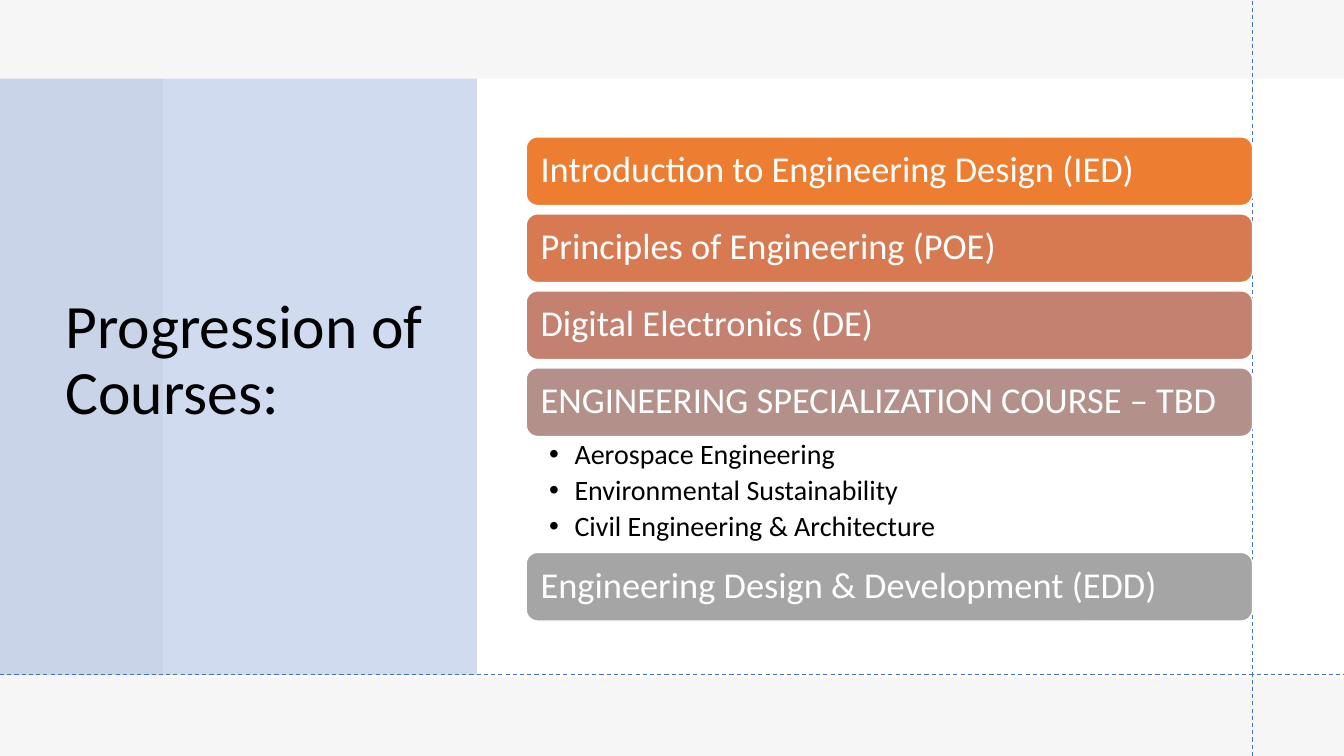
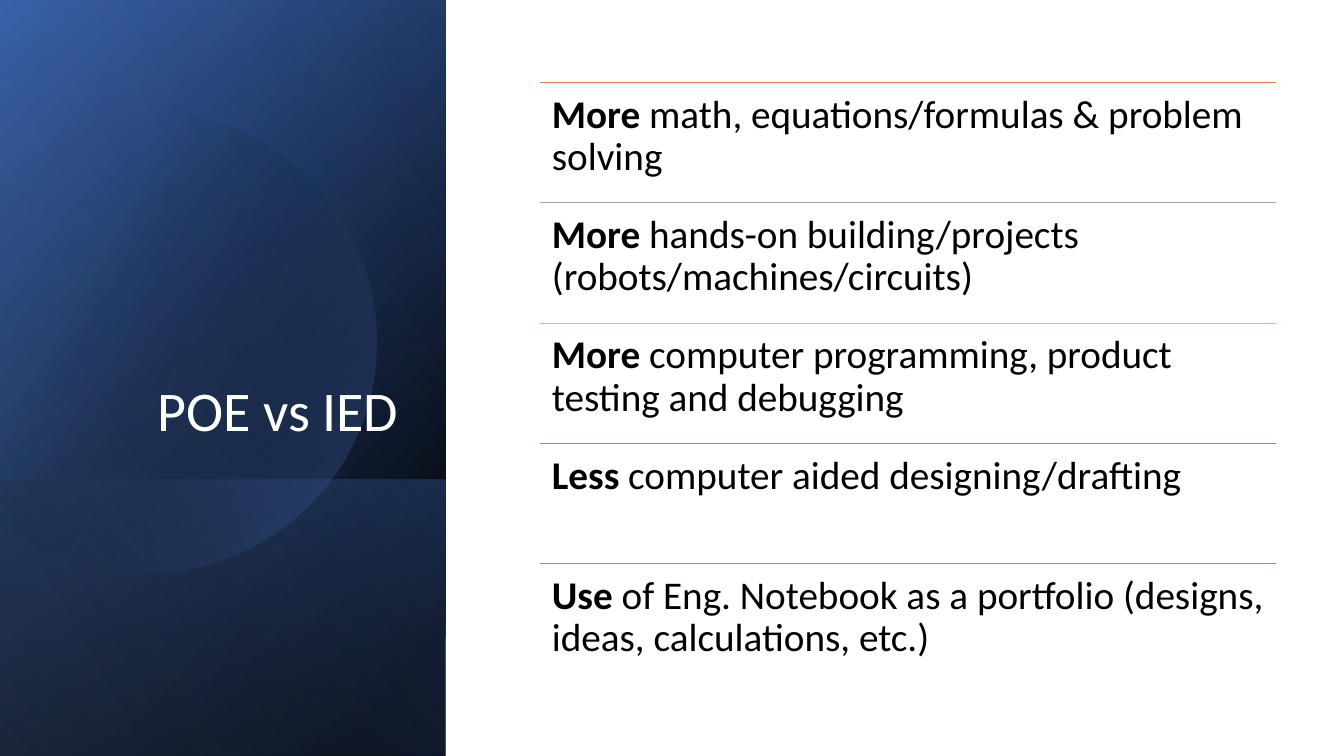
from math import acos, cos, radians, sin

from lxml.etree import SubElement
from pptx import Presentation
from pptx.dml.color import RGBColor
from pptx.enum.dml import MSO_LINE
from pptx.enum.shapes import MSO_CONNECTOR, MSO_SHAPE
from pptx.enum.text import MSO_ANCHOR, MSO_AUTO_SIZE, PP_ALIGN
from pptx.oxml import parse_xml
from pptx.oxml.ns import nsdecls, qn
from pptx.util import Cm, Pt

BLACK = RGBColor(0x00, 0x00, 0x00)
WHITE = RGBColor(0xFF, 0xFF, 0xFF)
PALE_GREY = RGBColor(0xE7, 0xE6, 0xE6)
BLUE = RGBColor(0x44, 0x72, 0xC4)
DARK_BLUE = RGBColor(0x2F, 0x55, 0x97)
LIGHT_BLUE = RGBColor(0x8F, 0xAA, 0xDC)
ORANGE = RGBColor(0xED, 0x7D, 0x31)
TERRACOTTA = RGBColor(0xD8, 0x7A, 0x51)
CLAY = RGBColor(0xC4, 0x81, 0x70)
MAUVE = RGBColor(0xB4, 0x90, 0x8B)
GREY = RGBColor(0xA5, 0xA5, 0xA5)
GOLD = RGBColor(0xFF, 0xC0, 0x00)
SKY = RGBColor(0x5B, 0x9B, 0xD5)
GREEN = RGBColor(0x70, 0xAD, 0x47)

FONT = "Calibri"
PAGE_WIDTH, PAGE_HEIGHT = 33.87, 19.05

COURSES = [
    ("Introduction to Engineering Design (IED)", ORANGE, []),
    ("Principles of Engineering (POE)", TERRACOTTA, []),
    ("Digital Electronics (DE)", CLAY, []),
    ("ENGINEERING SPECIALIZATION COURSE – TBD", MAUVE,
     ["Aerospace Engineering", "Environmental Sustainability",
      "Civil Engineering & Architecture"]),
    ("Engineering Design & Development (EDD)", GREY, []),
]

DIFFERENCES = [
    ("More", " math, equations/formulas & problem solving", ORANGE),
    ("More", " hands-on building/projects (robots/machines/circuits)", GREY),
    ("More", " computer programming, product testing and debugging", GOLD),
    ("Less", " computer aided designing/drafting", SKY),
    ("Use", " of Eng. Notebook as a portfolio (designs, ideas, calculations, etc.)",
     GREEN),
]


def set_attributes(target, values):
    for name, value in values.items():
        setattr(target, name, value)


def set_frame(frame, insets, anchor=MSO_ANCHOR.TOP):
    """Wrap the text and set the left, top, right and bottom insets."""
    set_attributes(frame, {"word_wrap": True, "auto_size": MSO_AUTO_SIZE.NONE,
                           "vertical_anchor": anchor})
    sides = ("left", "top", "right", "bottom")
    set_attributes(frame, {f"margin_{side}": Cm(inset)
                           for side, inset in zip(sides, insets)})


def write_spans(para, spans, size, color, align=PP_ALIGN.LEFT):
    """Fill a paragraph from (text, bold) pairs."""
    set_attributes(para, {"alignment": align, "line_spacing": 0.9})
    for text, bold in spans:
        span = para.add_run()
        span.text = text
        set_attributes(span.font, {"name": FONT, "size": Pt(size), "bold": bold})
        span.font.color.rgb = color


def place_title(page, text, place, size, color, anchor, align):
    """Format the title and bring it in front of the shapes drawn so far."""
    title = page.shapes.title
    names = ("left", "top", "width", "height")
    set_attributes(title, {name: Cm(value) for name, value in zip(names, place)})
    set_frame(title.text_frame, (0.25, 0.13, 0.25, 0.13), anchor)
    write_spans(title.text_frame.paragraphs[0], [(text, False)], size, color, align)
    title.element.getparent().append(title.element)


def add_filled(page, kind, place, color, opacity=100):
    shape = page.shapes.add_shape(kind, *map(Cm, place))
    shape.shadow.inherit = False
    shape.line.fill.background()
    shape.fill.solid()
    shape.fill.fore_color.rgb = color
    if opacity < 100:
        tone = shape.element.spPr.find(qn("a:solidFill")).find(qn("a:srgbClr"))
        SubElement(tone, qn("a:alpha")).set("val", str(opacity * 1000))
    return shape


def fill_gradient(shape, stops, angle):
    """Use (position, colour, opacity) stops as the fill of a solid shape."""
    marks = "".join(
        f'<a:gs pos="{position * 1000}"><a:srgbClr val="{color}">'
        f'<a:alpha val="{opacity * 1000}"/></a:srgbClr></a:gs>'
        for position, color, opacity in stops)
    gradient = parse_xml(
        f'<a:gradFill {nsdecls("a")} rotWithShape="1"><a:gsLst>{marks}</a:gsLst>'
        f'<a:lin ang="{angle * 60000}" scaled="0"/></a:gradFill>')
    properties = shape.element.spPr
    properties.replace(properties.find(qn("a:solidFill")), gradient)


def add_turned_gradient(page, place, stops, angle):
    """Cover the place with a mirrored rectangle turned by 90 degrees."""
    left, top, width, height = place
    shift = (width - height) / 2
    turned = (left + shift, top - shift, height, width)
    shape = add_filled(page, MSO_SHAPE.RECTANGLE, turned, BLACK)
    shape.rotation = 90
    shape.element.spPr.find(qn("a:xfrm")).set("flipH", "1")
    fill_gradient(shape, stops, angle)


def add_cut_circle(page, center_x, center_y, radius, stops, angle):
    """Draw a circle that the left edge of the page cuts off."""
    limit = acos(-center_x / radius)
    steps = 90
    angles = [limit * (2 * step / steps - 1) for step in range(steps + 1)]
    points = [(Cm(center_x + radius * cos(turn)), Cm(center_y + radius * sin(turn)))
              for turn in angles]
    builder = page.shapes.build_freeform(*points[0])
    builder.add_line_segments(points[1:], close=True)
    circle = builder.convert_to_shape()
    circle.shadow.inherit = False
    circle.line.fill.background()
    circle.fill.solid()
    fill_gradient(circle, stops, angle)


def add_rule(page, start, end, color, weight, dash=None):
    rule = page.shapes.add_connector(MSO_CONNECTOR.STRAIGHT,
                                     *map(Cm, (*start, *end)))
    rule.line.color.rgb = color
    set_attributes(rule.line, {"width": Pt(weight), "dash_style": dash})
    SubElement(rule.element.spPr, qn("a:effectLst"))


def add_course_bar(page, place, text, color):
    bar = add_filled(page, MSO_SHAPE.ROUNDED_RECTANGLE, place, color)
    bar.line.color.rgb = WHITE
    bar.line.width = Pt(1)
    set_frame(bar.text_frame, (0.28, 0.1, 0.28, 0.1), MSO_ANCHOR.MIDDLE)
    write_spans(bar.text_frame.paragraphs[0], [(text, False)], 26, WHITE)


def add_bullet_list(page, place, items):
    frame = page.shapes.add_textbox(*map(Cm, place)).text_frame
    set_frame(frame, (0.58, 0.1, 0.5, 0.1))
    for index, item in enumerate(items):
        para = frame.add_paragraph() if index else frame.paragraphs[0]
        write_spans(para, [(item, False)], 20, BLACK)
        para.space_after = Pt(4)
        properties = para._p.get_or_add_pPr()
        properties.set("marL", str(Cm(0.64)))
        properties.set("indent", str(Cm(-0.64)))
        SubElement(properties, qn("a:buFont")).set("typeface", "Arial")
        SubElement(properties, qn("a:buChar")).set("char", "•")


def build_progression(page):
    full_page = (0, 0, PAGE_WIDTH, PAGE_HEIGHT)
    for place, color, opacity in [
        (full_page, WHITE, 100),
        (full_page, PALE_GREY, 35),
        ((4.11, 1.98, 29.76, 15.09), WHITE, 100),
        ((0, 1.98, 12.02, 15.03), BLUE, 25),
    ]:
        add_filled(page, MSO_SHAPE.RECTANGLE, place, color, opacity)
    place_title(page, "Progression of Courses:", (1.4, 1.88, 10.03, 14.45),
                44, BLACK, MSO_ANCHOR.MIDDLE, PP_ALIGN.LEFT)

    left, top, width = 13.26, 3.45, 18.31
    bar_height, gap, list_height = 1.73, 0.21, 2.92
    right = left + width
    add_rule(page, (right, PAGE_HEIGHT), (right, 0), BLUE, 0.75, MSO_LINE.DASH)
    add_rule(page, (0, 16.99), (PAGE_WIDTH, 16.99), BLUE, 0.75, MSO_LINE.DASH)
    for course, color, options in COURSES:
        add_course_bar(page, (left, top, width, bar_height), course, color)
        top += bar_height
        if options:
            add_bullet_list(page, (left, top, width, list_height), options)
        top += list_height if options else gap


def build_comparison(page):
    sidebar_width, band_top = 11.23, 12.09
    sidebar = (0, 0, sidebar_width, PAGE_HEIGHT)
    band = (0, band_top, sidebar_width, PAGE_HEIGHT - band_top)
    add_turned_gradient(page, sidebar, [(8, BLACK, 100), (100, DARK_BLUE, 100)], 50)
    add_turned_gradient(page, sidebar, [(0, BLACK, 0), (99, BLUE, 46)], 30)
    add_turned_gradient(page, band, [(2, BLUE, 29), (100, BLACK, 30)], 130)
    add_cut_circle(page, 3.66, 8.61, 5.82, [(29, BLACK, 0), (100, BLUE, 43)], 30)
    add_turned_gradient(page, sidebar, [(0, BLACK, 0), (99, LIGHT_BLUE, 11)], 120)
    place_title(page, "POE vs IED", (1.63, 4.67, 8.66, 6.65),
                40, WHITE, MSO_ANCHOR.BOTTOM, PP_ALIGN.RIGHT)

    left, first_top, width, row_height = 13.61, 2.08, 18.54, 3.03
    for index, (lead, rest, color) in enumerate(DIFFERENCES):
        top = first_top + index * row_height
        add_rule(page, (left, top), (left + width, top), color, 0.5)
        box = page.shapes.add_textbox(*map(Cm, (left, top, width, row_height)))
        set_frame(box.text_frame, (0.3, 0.3, 0.3, 0.3))
        write_spans(box.text_frame.paragraphs[0], [(lead, True), (rest, False)],
                    28, BLACK)


def main():
    deck = Presentation()
    deck.slide_width, deck.slide_height = Cm(PAGE_WIDTH), Cm(PAGE_HEIGHT)
    title_only = deck.slide_layouts[5]
    for build in (build_progression, build_comparison):
        build(deck.slides.add_slide(title_only))
    deck.save("out.pptx")


if __name__ == "__main__":
    main()
